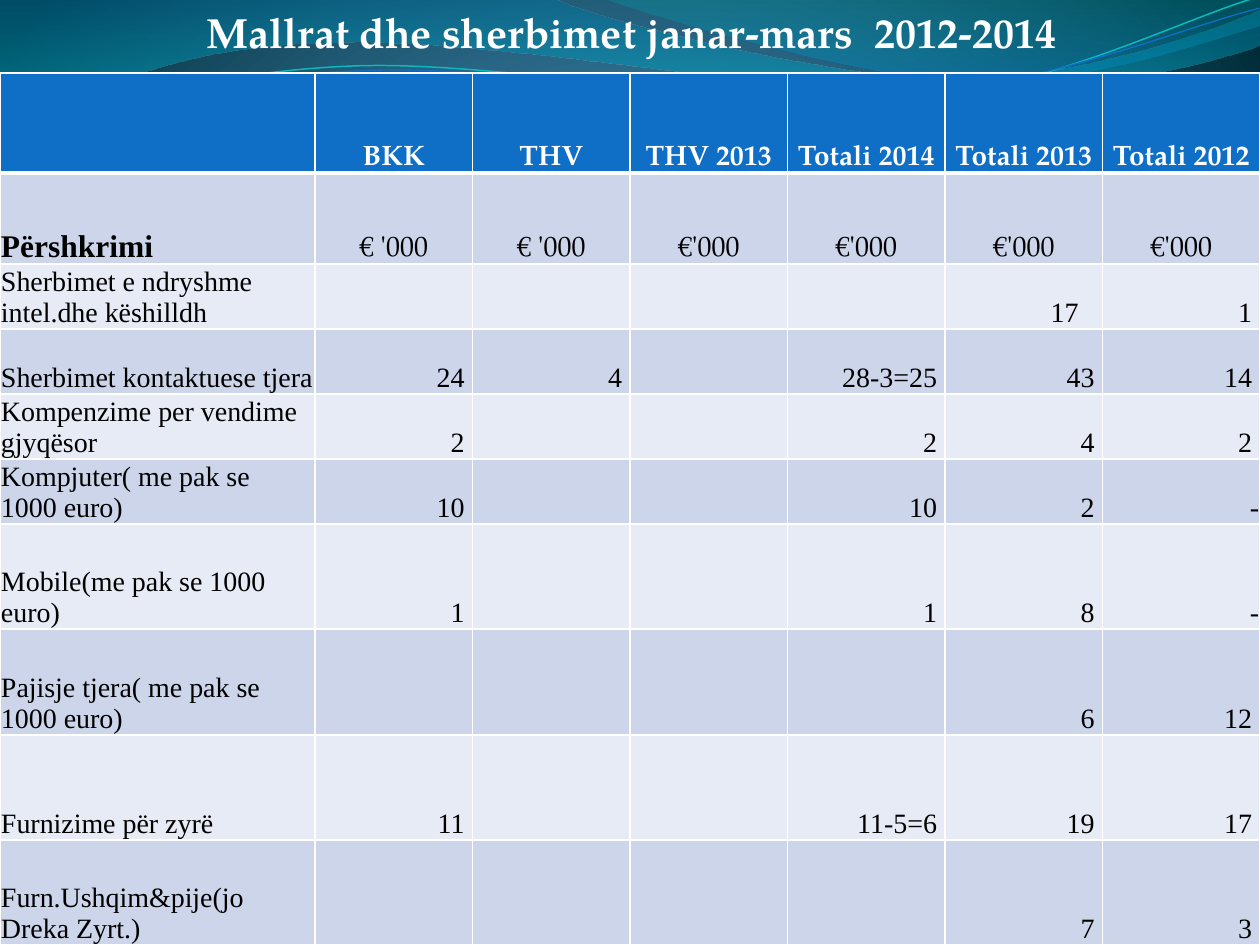
"""Build the goods and services slide: a heading on a wave banner above a spending table."""
from lxml import etree
from pptx import Presentation
from pptx.dml.color import RGBColor
from pptx.enum.text import MSO_ANCHOR, PP_ALIGN
from pptx.oxml import parse_xml
from pptx.oxml.ns import nsdecls, qn
from pptx.util import Pt

PX = 914400 / 126
LEFT, CENTER, RIGHT = PP_ALIGN.LEFT, PP_ALIGN.CENTER, PP_ALIGN.RIGHT
TOP, BOTTOM = MSO_ANCHOR.TOP, MSO_ANCHOR.BOTTOM
SERIF, HEADING = "Times New Roman", "TeX Gyre Pagella"
COLORS = {
    "white": "FFFFFF", "black": "000000", "header": "0F6FC6",
    "dark band": "CCD5EA", "light band": "E7EBF5",
    "cyan line": "0AB8BF", "blue line": "0F6FC6",
}
BACKGROUND_STOPS = [(0, "4AA0D6", 100), (25, "4C98C7", 100), (100, "002C38", 100)]
BACKGROUND_SHADE = '<a:path path="circle"><a:fillToRect l="10000" t="110000" r="10000" b="100000"/></a:path>'
WAVE_SHADE = '<a:lin ang="5400000" scaled="1"/>'


def gradient(stops, shade):
    stop_xml = "".join(
        f'<a:gs pos="{position * 1000}"><a:srgbClr val="{color}">'
        f'<a:alpha val="{alpha * 1000}"/></a:srgbClr></a:gs>'
        for position, color, alpha in stops
    )
    return parse_xml(
        f'<a:gradFill {nsdecls("a")} rotWithShape="1"><a:gsLst>{stop_xml}</a:gsLst>{shade}</a:gradFill>'
    )


def style_text(paragraph, text, alignment, **font_values):
    paragraph.alignment = alignment
    run = paragraph.add_run()
    run.text = text
    color = font_values.pop("color")
    for name, value in font_values.items():
        setattr(run.font, name, value)
    run.font.color.rgb = RGBColor.from_string(COLORS[color])


presentation = Presentation()
presentation.slide_width = round(1260 * PX)
presentation.slide_height = round(945 * PX)
slide = presentation.slides.add_slide(presentation.slide_layouts[0])
title, subtitle = slide.placeholders
title.element.getparent().remove(title.element)

slide.background.fill.gradient()
background = slide.background.fill._xPr
background.replace(background.find(qn("a:gradFill")), gradient(BACKGROUND_STOPS, BACKGROUND_SHADE))

WAVES = [
    ([(0, 0), (554, -1), (600, 21, 837, 79, 955, 79), (1075, 79, 1207, 33, 1260, 11),
      (1261, 45), (1239, 55, 1096, 96, 940, 95), (784, 95, 481, 35, 324, 43),
      (163, 45, 58, 105, -1, 142), (0, 0)],
     [(0, "0074A1", 45), (100, "00C6CF", 55)], None, 0),
    ([(604, -1), (641, 14, 859, 78, 969, 82), (1079, 87, 1211, 40, 1260, 26), (1260, 0), (604, -1)],
     [(0, "00A1A9", 30), (80, "008BBF", 45)], None, 0),
    ([(-3, 110), (58, 90, 199, 52, 350, 53), (499, 53, 745, 117, 896, 114),
      (1049, 109, 1184, 45, 1260, 27)], None, "cyan line", 0.85),
    ([(-2, 101), (57, 94, 207, 57, 357, 58), (509, 58, 750, 112, 902, 108),
      (1052, 104, 1188, 52, 1262, 38)], None, "blue line", 0.75),
]
for segments, stops, line_color, line_width in WAVES:
    points = [pair for segment in segments for pair in zip(segment[::2], segment[1::2])]
    builder = slide.shapes.build_freeform(*points[0], scale=PX)
    builder.add_line_segments(points[1:], close=stops is not None)
    wave = builder.convert_to_shape()
    wave.shadow.inherit = False
    straight_parts = iter(list(wave.element.iter(qn("a:lnTo"))))
    for segment in segments[1:]:
        part = next(straight_parts)
        if len(segment) == 6:
            part.tag = qn("a:cubicBezTo")
            for other in (next(straight_parts), next(straight_parts)):
                part.append(other[0])
                other.getparent().remove(other)
    if stops:
        wave.line.fill.background()
        wave.fill.gradient()
        properties = wave.element.spPr
        properties.replace(properties.find(qn("a:gradFill")), gradient(stops, WAVE_SHADE))
    else:
        wave.rotation = 357.3
        wave.fill.background()
        wave.line.color.rgb = RGBColor.from_string(COLORS[line_color])
        wave.line.width = Pt(line_width)

slide.shapes._spTree.append(subtitle.element)
for name, value in {"left": 0, "top": 0, "width": 1260, "height": 998}.items():
    setattr(subtitle, name, round(value * PX))
frame = subtitle.text_frame
for name, value in {"left": 6, "top": 6, "right": 3, "bottom": 6}.items():
    setattr(frame, f"margin_{name}", round(value * PX))
frame.vertical_anchor = TOP
frame.paragraphs[0].space_before = Pt(5)
style_text(frame.paragraphs[0], "Mallrat dhe sherbimet janar-mars  2012-2014", CENTER,
           name=HEADING, size=Pt(24), bold=True, color="white")

ROWS = [
    (100, ["", "BKK", "THV", "THV 2013", "Totali 2014", "Totali 2013", "Totali 2012"]),
    (91, ["Përshkrimi", "€ '000", "€ '000", "€'000", "€'000", "€'000", "€'000"]),
    (65, ["Sherbimet e ndryshme intel.dhe këshilldh", "", "", "", "", "17", "1"]),
    (65, ["Sherbimet kontaktuese tjera", "24", "4", "", "28-3=25", "43", "14"]),
    (65, ["Kompenzime per vendime gjyqësor", "2", "", "", "2", "4", "2"]),
    (65, ["Kompjuter( me pak se  1000 euro)", "10", "", "", "10", "2", "-"]),
    (105, ["Mobile(me pak se 1000 euro)", "1", "", "", "1", "8", "-"]),
    (106, ["Pajisje tjera( me pak se 1000 euro)", "", "", "", "", "6", "12"]),
    (105, ["Furnizime për zyrë", "11", "", "", "11-5=6", "19", "17"]),
    (105, ["Furn.Ushqim&pije(jo Dreka Zyrt.)", "", "", "", "", "7", "3"]),
]
height = sum(row_height for row_height, texts in ROWS)
table = slide.shapes.add_table(
    len(ROWS), 7, 0, round(73 * PX), round(1260 * PX), round(height * PX)
).table
for index, column in enumerate(table.columns):
    column.width = round(315 * PX) if index == 0 else round(315 * PX / 2)

for row_index, (row_height, texts) in enumerate(ROWS):
    table.rows[row_index].height = round(row_height * PX)
    band = "header" if row_index == 0 else ("dark band" if row_index % 2 else "light band")
    for column_index, text in enumerate(texts):
        cell = table.cell(row_index, column_index)
        cell.fill.solid()
        cell.fill.fore_color.rgb = RGBColor.from_string(COLORS[band])
        cell.vertical_anchor = BOTTOM
        is_number = row_index > 1 and column_index > 0
        right = 1
        if is_number and text != "-":
            right = 24 if text == "17" and row_index == 2 else 8
        for name, value in {"left": 1, "top": 1, "right": right, "bottom": 0}.items():
            setattr(cell, f"margin_{name}", round(value * PX))
        cell_properties = cell._tc.get_or_add_tcPr()
        for position, side in enumerate("LRTB"):
            thick = (row_index, side) in [(0, "B"), (1, "T")]
            border = etree.Element(qn(f"a:ln{side}"), w=str(Pt(3 if thick else 1)))
            fill = etree.SubElement(border, qn("a:solidFill"))
            etree.SubElement(fill, qn("a:srgbClr"), val=COLORS["white"])
            cell_properties.insert(position, border)
        if text:
            is_label = column_index == 0
            style_text(
                cell.text_frame.paragraphs[0], text,
                LEFT if is_label else RIGHT if is_number else CENTER,
                name=SERIF if is_label or is_number else HEADING,
                size=Pt(18 if text == "Përshkrimi" else 16),
                bold=row_index == 0 or text == "Përshkrimi",
                color="white" if row_index == 0 else "black",
            )

presentation.save("out.pptx")
